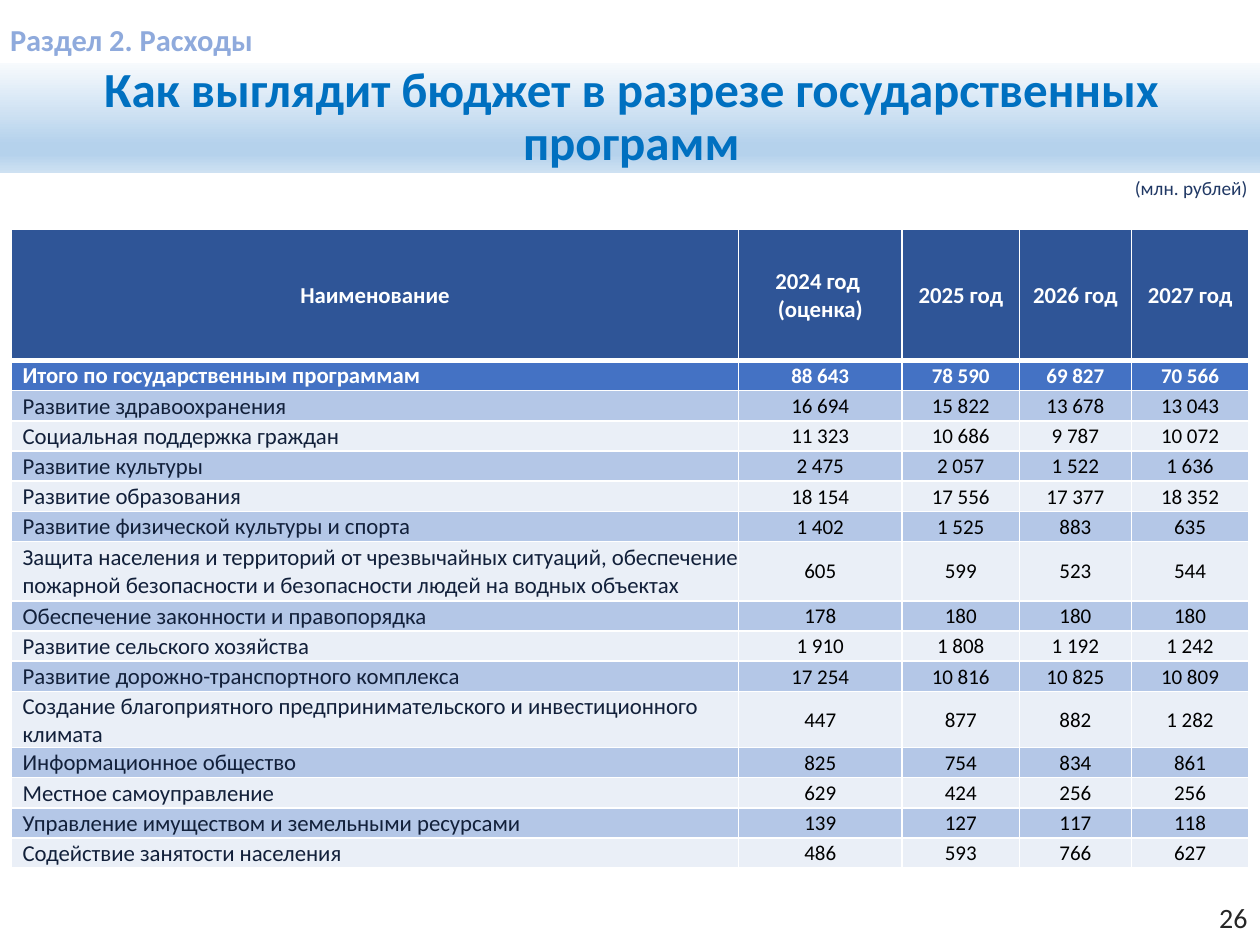
from dataclasses import dataclass

from lxml.etree import SubElement
from pptx import Presentation
from pptx.dml.color import RGBColor
from pptx.enum.text import MSO_ANCHOR, MSO_AUTO_SIZE, PP_ALIGN
from pptx.oxml import parse_xml
from pptx.oxml.ns import nsdecls, qn
from pptx.util import Inches, Pt


@dataclass(frozen=True)
class Theme:
    """Colours, type sizes and font of the slide."""

    font: str = "Calibri"
    title: str = "0070C0"
    section: str = "8FAADC"
    unit: str = "203864"
    number: str = "262626"
    label: str = "12203A"
    value: str = "000000"
    white: str = "FFFFFF"
    header_fill: str = "2F5597"
    total_fill: str = "4472C4"
    band_fills: tuple = ("B4C7E7", "EAEFF7")
    title_stops: tuple = ((0, "F7FAFD"), (74, "B5D2EC"), (83, "B5D2EC"), (100, "CEE1F2"))
    title_size: int = 28
    section_size: int = 30
    number_size: int = 16
    label_size: int = 13
    value_size: int = 12
    unit_size: int = 11


THEME = Theme()
HEADERS = ("Наименование", "2024 год \n(оценка)", "2025 год", "2026 год", "2027 год")
COLUMN_WIDTHS = (5.77, 1.3, 0.93, 0.89, 0.93)
HEADER_HEIGHT, ROW_HEIGHT, TALL_HEIGHT = 1.04, 0.24, 0.47
TALL_ROW = 7
JUSTIFIED_ROWS = {3, 5, 7, 10, 12, 13, 14, 15}
PROGRAMS = (
    ("Итого по государственным программам", "88 643", "78 590", "69 827", "70 566"),
    ("Развитие здравоохранения", "16 694", "15 822", "13 678", "13 043"),
    ("Социальная поддержка граждан", "11 323", "10 686", "9 787", "10 072"),
    ("Развитие культуры", "2 475", "2 057", "1 522", "1 636"),
    ("Развитие образования", "18 154", "17 556", "17 377", "18 352"),
    ("Развитие физической культуры и спорта", "1 402", "1 525", "883", "635"),
    ("Защита населения и территорий от чрезвычайных ситуаций, обеспечение "
     "пожарной безопасности и безопасности людей на водных объектах", "605", "599", "523", "544"),
    ("Обеспечение законности и правопорядка", "178", "180", "180", "180"),
    ("Развитие сельского хозяйства", "1 910", "1 808", "1 192", "1 242"),
    ("Развитие дорожно-транспортного комплекса", "17 254", "10 816", "10 825", "10 809"),
    ("Создание благоприятного предпринимательского и инвестиционного климата",
     "447", "877", "882", "1 282"),
    ("Информационное общество", "825", "754", "834", "861"),
    ("Местное самоуправление", "629", "424", "256", "256"),
    ("Управление имуществом и земельными ресурсами", "139", "127", "117", "118"),
    ("Содействие занятости населения", "486", "593", "766", "627"),
)


def write(frame, text, *, size, color, bold=False, align=PP_ALIGN.LEFT, indent=0,
          line_spacing=None, baseline=None):
    """Fill a text frame with one formatted paragraph per line of text."""
    for index, line in enumerate(text.split("\n")):
        para = frame.add_paragraph() if index else frame.paragraphs[0]
        para.alignment = align
        if line_spacing:
            para.line_spacing = line_spacing
        if indent:
            properties = para._p.get_or_add_pPr()
            properties.set("marL", str(Inches(indent)))
            properties.set("indent", "0")
        span = para.add_run()
        span.text = line
        span.font.name = THEME.font
        span.font.size = Pt(size)
        span.font.bold = bold
        span.font.color.rgb = RGBColor.from_string(color)
        if baseline:
            span._r.get_or_add_rPr().set("baseline", str(baseline * 1000))


def set_frame(frame, insets):
    """Set wrapping, growth and the left, top, right, bottom insets of a text frame."""
    frame.word_wrap = True
    frame.auto_size = MSO_AUTO_SIZE.SHAPE_TO_FIT_TEXT
    frame.vertical_anchor = MSO_ANCHOR.TOP
    frame.margin_left, frame.margin_top, frame.margin_right, frame.margin_bottom = map(Inches, insets)


def add_label(page, text, place, insets, **style):
    """Add a text box with formatted text."""
    box = page.shapes.add_textbox(*map(Inches, place))
    set_frame(box.text_frame, insets)
    write(box.text_frame, text, **style)


def fill_title(page, text):
    """Place the title as a full-width band with a vertical gradient."""
    title = page.shapes.title
    title.left, title.top, title.width, title.height = map(Inches, (0, 0.5, 10, 0.87))
    stops = "".join(f'<a:gs pos="{position * 1000}"><a:srgbClr val="{color}"/></a:gs>'
                    for position, color in THEME.title_stops)
    title._element.spPr.append(parse_xml(
        f'<a:gradFill {nsdecls("a")} rotWithShape="1"><a:gsLst>{stops}</a:gsLst>'
        '<a:lin ang="5400000" scaled="0"/></a:gradFill>'))
    set_frame(title.text_frame, (0, 0.02, 0, 0))
    write(title.text_frame, text, size=THEME.title_size, color=THEME.title, bold=True,
          align=PP_ALIGN.CENTER, indent=0.02, line_spacing=0.9)


def set_borders(cell, top, bottom):
    """Draw white cell borders with the given top and bottom widths in points."""
    properties = cell._tc.get_or_add_tcPr()
    for index, (side, width) in enumerate((("L", 1), ("R", 1), ("T", top), ("B", bottom))):
        line = SubElement(properties, qn(f"a:ln{side}"), w=str(Pt(width)))
        fill = SubElement(line, qn("a:solidFill"))
        SubElement(fill, qn("a:srgbClr"), val=THEME.white)
        properties.insert(index, line)


def row_fill(row):
    """Return the fill colour of a table row."""
    if row < 2:
        return (THEME.header_fill, THEME.total_fill)[row]
    return THEME.band_fills[row % 2]


def fill_cell(cell, text, row, column):
    """Write and format one table cell by its position."""
    is_header, is_name = row == 0, column == 0
    cell.fill.solid()
    cell.fill.fore_color.rgb = RGBColor.from_string(row_fill(row))
    cell.vertical_anchor = MSO_ANCHOR.MIDDLE
    cell.margin_left = cell.margin_top = cell.margin_right = Inches(0.01)
    cell.margin_bottom = 0
    set_borders(cell, top=3 if row == 1 else 1, bottom=3 if is_header else 1)
    align = PP_ALIGN.CENTER
    if is_name and not is_header:
        align = PP_ALIGN.JUSTIFY if row in JUSTIFIED_ROWS else PP_ALIGN.LEFT
    body_color = THEME.label if is_name else THEME.value
    write(cell.text_frame, text, align=align, bold=row < 2,
          size=THEME.label_size if is_header or is_name else THEME.value_size,
          color=THEME.white if row < 2 else body_color,
          indent=0.08 if is_name and not is_header else 0)


def add_budget_table(page):
    """Add the table of state programs by year."""
    rows = (HEADERS, *PROGRAMS)
    heights = [ROW_HEIGHT] * len(rows)
    heights[0], heights[TALL_ROW] = HEADER_HEIGHT, TALL_HEIGHT
    place = map(Inches, (0.09, 1.82, sum(COLUMN_WIDTHS), sum(heights)))
    table = page.shapes.add_table(len(rows), len(HEADERS), *place).table
    table.horz_banding = False
    for column, width in zip(table.columns, COLUMN_WIDTHS):
        column.width = Inches(width)
    for row, (texts, height) in enumerate(zip(rows, heights)):
        table.rows[row].height = Inches(height)
        for column, text in enumerate(texts):
            fill_cell(table.cell(row, column), text, row, column)


def main():
    """Build the slide and save it."""
    deck = Presentation()
    deck.slide_width, deck.slide_height = Inches(10), Inches(7.5)
    page = deck.slides.add_slide(deck.slide_layouts[5])
    add_label(page, "26", (7.41, 7.15, 2.49, 0.27), (0, 0, 0, 0),
              size=THEME.number_size, color=THEME.number, align=PP_ALIGN.RIGHT)
    add_label(page, "(млн. рублей)", (7.43, 1.35, 2.57, 0.29), (0.1, 0.05, 0.1, 0.05),
              size=THEME.unit_size, color=THEME.unit, align=PP_ALIGN.RIGHT)
    fill_title(page, "Как выглядит бюджет в разрезе государственных программ")
    add_label(page, "Раздел 2. Расходы", (0, 0.04, 10, 0.47), (0, 0.02, 0, 0),
              size=THEME.section_size, color=THEME.section, bold=True,
              align=PP_ALIGN.JUSTIFY, indent=0.08, line_spacing=0.9, baseline=3)
    add_budget_table(page)
    deck.save("out.pptx")


if __name__ == "__main__":
    main()
